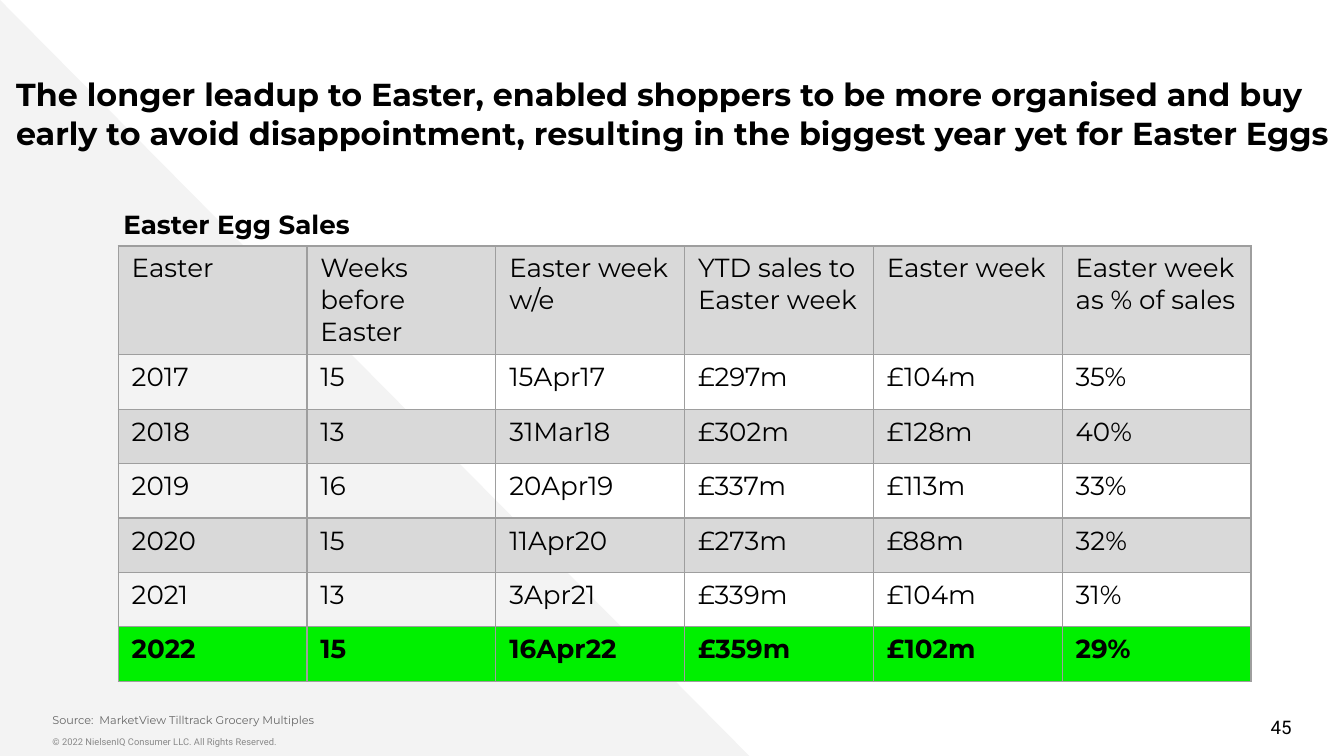
from lxml import etree
from pptx import Presentation
from pptx.dml.color import RGBColor
from pptx.enum.shapes import MSO_SHAPE
from pptx.enum.text import MSO_ANCHOR, MSO_AUTO_SIZE, PP_ALIGN
from pptx.oxml.ns import qn
from pptx.util import Emu, Pt

PX = 4572
TRIANGLE = MSO_SHAPE.RIGHT_TRIANGLE
TOP, MIDDLE, BOTTOM = MSO_ANCHOR.TOP, MSO_ANCHOR.MIDDLE, MSO_ANCHOR.BOTTOM
LEFT, RIGHT = PP_ALIGN.LEFT, PP_ALIGN.RIGHT
FIXED, GROW = MSO_AUTO_SIZE.NONE, MSO_AUTO_SIZE.SHAPE_TO_FIT_TEXT

BLACK = RGBColor(0x00, 0x00, 0x00)
SOURCE_GREY = RGBColor(0x66, 0x66, 0x66)
COPYRIGHT_GREY = RGBColor(0x88, 0x88, 0x88)
BORDER_GREY = RGBColor(0x9E, 0x9E, 0x9E)
BAND_GREY = RGBColor(0xD9, 0xD9, 0xD9)
PALE_GREY = RGBColor(0xF3, 0xF3, 0xF3)
GREEN = RGBColor(0x00, 0xF0, 0x00)

HEADING_FONT = "Montserrat"
FOOTER_FONT = "Roboto"

COLUMN_WIDTH = 281
HEADER_HEIGHT = 162
ROW_HEIGHT = 81
SALES = [
    ["Easter", "Weeks before Easter", "Easter week w/e",
     "YTD sales to Easter week", "Easter week", "Easter week as % of sales"],
    ["2017", "15", "15Apr17", "£297m", "£104m", "35%"],
    ["2018", "13", "31Mar18", "£302m", "£128m", "40%"],
    ["2019", "16", "20Apr19", "£337m", "£113m", "33%"],
    ["2020", "15", "11Apr20", "£273m", "£88m", "32%"],
    ["2021", "13", "3Apr21", "£339m", "£104m", "31%"],
    ["2022", "15", "16Apr22", "£359m", "£102m", "29%"],
]


def px(*lengths):
    return [Emu(length * PX) for length in lengths]


def write(frame, text, size, font=HEADING_FONT, color=BLACK, bold=False, align=LEFT):
    frame.text = text
    para = frame.paragraphs[0]
    para.alignment = align
    para.space_before = Pt(0)
    for span in para.runs:
        span.font.size = Pt(size)
        span.font.name = font
        span.font.color.rgb = color
        span.font.bold = bold


def set_frame(frame, side, edge, anchor=TOP, wrap=True, fit=FIXED):
    frame.margin_left, frame.margin_right = px(side, side)
    frame.margin_top, frame.margin_bottom = px(edge, edge)
    frame.vertical_anchor = anchor
    frame.word_wrap = wrap
    frame.auto_size = fit


def place_text(box, area, text, size, anchor=TOP, **style):
    box.left, box.top, box.width, box.height = px(*area)
    set_frame(box.text_frame, 0, 20, anchor)
    write(box.text_frame, text, size, **style)


def add_text(page, area, text, size, side=0, anchor=TOP, wrap=True, fit=FIXED, **style):
    box = page.shapes.add_textbox(*px(*area))
    set_frame(box.text_frame, side, 10, anchor, wrap, fit)
    write(box.text_frame, text, size, **style)


def add_backdrop(page):
    triangle = page.shapes.add_shape(TRIANGLE, *px(0, 0, 1118, 1128))
    triangle.shadow.inherit = False
    triangle.fill.solid()
    triangle.fill.fore_color.rgb = PALE_GREY
    triangle.line.fill.background()
    page.shapes.title.element.addprevious(triangle.element)


def add_borders(cell):
    properties = cell._tc.get_or_add_tcPr()
    for index, side in enumerate(("lnL", "lnR", "lnT", "lnB")):
        line = etree.Element(qn(f"a:{side}"), w=str(Pt(0.75)))
        fill = etree.SubElement(line, qn("a:solidFill"))
        etree.SubElement(fill, qn("a:srgbClr"), val=str(BORDER_GREY))
        properties.insert(index, line)


def fill_cell(cell, color):
    if color is None:
        cell.fill.background()
    else:
        cell.fill.solid()
        cell.fill.fore_color.rgb = color


def add_sales_table(page):
    row_count, column_count = len(SALES), len(SALES[0])
    height = HEADER_HEIGHT + ROW_HEIGHT * (row_count - 1)
    area = px(176, 366, COLUMN_WIDTH * column_count, height)
    table = page.shapes.add_table(row_count, column_count, *area).table
    for column in table.columns:
        column.width = px(COLUMN_WIDTH)[0]
    for index, values in enumerate(SALES):
        latest = index == row_count - 1
        band = BAND_GREY if index % 2 == 0 else None
        table.rows[index].height = px(ROW_HEIGHT if index else HEADER_HEIGHT)[0]
        for cell, value in zip(table.rows[index].cells, values):
            write(cell.text_frame, value, 14, bold=latest)
            fill_cell(cell, GREEN if latest else band)
            add_borders(cell)


def main():
    deck = Presentation()
    deck.slide_width, deck.slide_height = px(2000, 1125)
    page = deck.slides.add_slide(deck.slide_layouts[0])
    add_backdrop(page)
    place_text(page.shapes.title, (24, 92, 1990, 86),
               "The longer leadup to Easter, enabled shoppers to be more organised and buy "
               "early to avoid disappointment, resulting in the biggest year yet for Easter Eggs",
               17, bold=True)
    place_text(page.placeholders[1], (78, 1062, 1784, 40),
               "Source:  MarketView Tilltrack Grocery Multiples",
               6, anchor=BOTTOM, color=SOURCE_GREY)
    add_text(page, (78, 1086, 1108, 40),
             "© 2022 NielsenIQ Consumer LLC. All Rights Reserved.",
             5, font=FOOTER_FONT, color=COPYRIGHT_GREY)
    add_text(page, (1472, 1052, 450, 60), "45", 10,
             anchor=MIDDLE, font=FOOTER_FONT, align=RIGHT)
    add_sales_table(page)
    add_text(page, (164, 300, 380, 68), "Easter Egg Sales", 14,
             side=20, wrap=False, fit=GROW, bold=True)
    deck.save("out.pptx")


if __name__ == "__main__":
    main()
